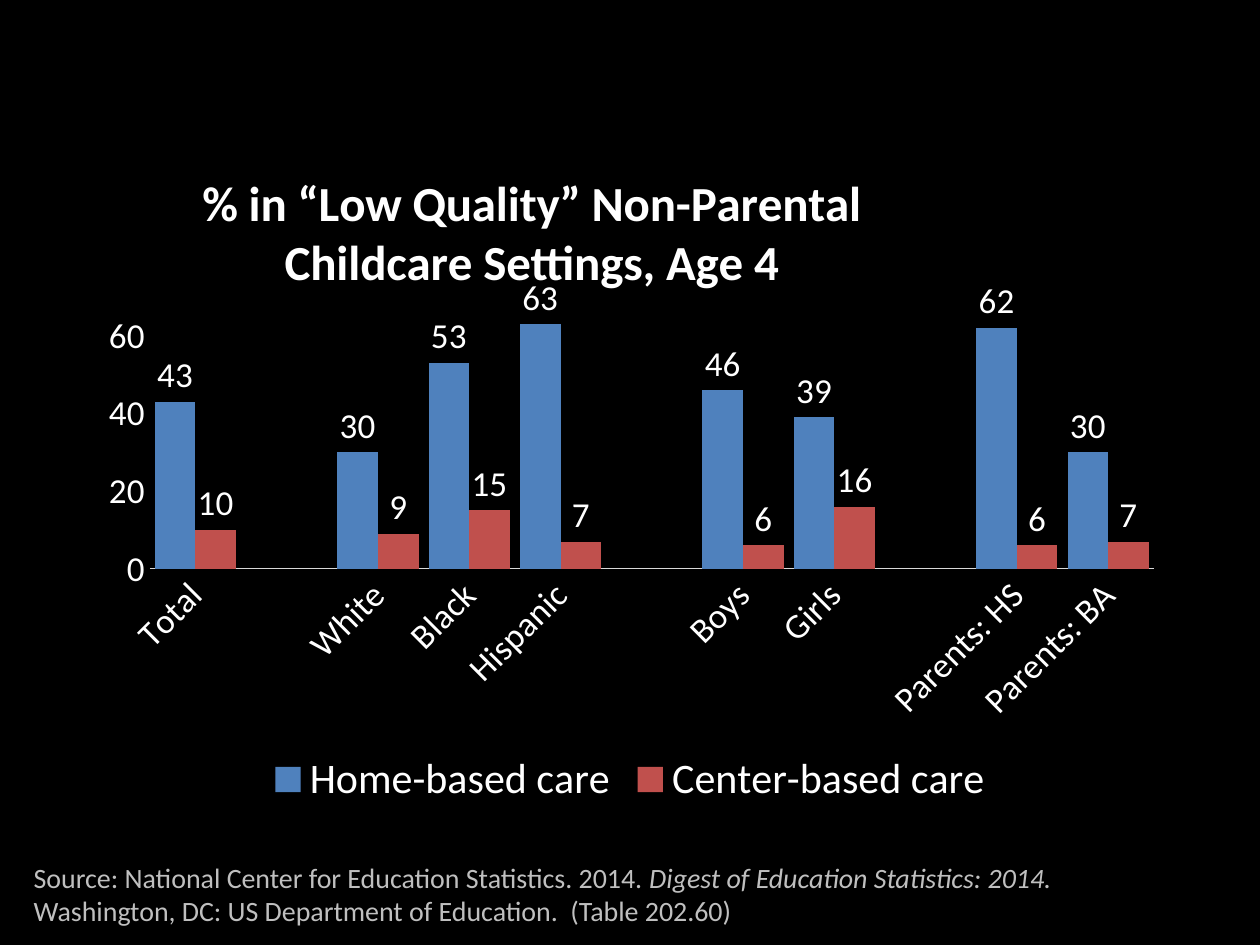
import pptx
import pptx.chart.data
import pptx.dml.color
import pptx.enum.chart
import pptx.enum.text
import pptx.util
from lxml import etree
from pptx.util import Cm

CHART_NS = "http://schemas.openxmlformats.org/drawingml/2006/chart"
WHITE = "FFFFFF"
SERIES = {
    "Home-based care": ("4F81BD", [43, None, 30, 53, 63, None, 46, 39, None, 62, 30]),
    "Center-based care": ("C0504D", [10, None, 9, 15, 7, None, 6, 16, None, 6, 7]),
}
CATEGORIES = ["Total", "", "White", "Black", "Hispanic", "", "Boys", "Girls",
              "", "Parents: HS", "Parents: BA"]


def color(hex_string):
    return pptx.dml.color.RGBColor.from_string(hex_string)


def fill(target, hex_string):
    target.fill.solid()
    target.fill.fore_color.rgb = color(hex_string)


def place(element, index, **fractions):
    for old in element.findall(f"{{{CHART_NS}}}layout"):
        element.remove(old)
    layout = etree.Element(f"{{{CHART_NS}}}layout")
    manual = etree.SubElement(layout, f"{{{CHART_NS}}}manualLayout")
    settings = {"xMode": "edge", "yMode": "edge", **fractions}
    if "w" in fractions:
        settings = {"layoutTarget": "inner", **settings}
    for name, value in settings.items():
        etree.SubElement(manual, f"{{{CHART_NS}}}{name}", val=str(value))
    element.insert(index, layout)


class ChartSlide:
    font_name = "Calibri"

    def __init__(self, deck, background):
        self.page = deck.slides.add_slide(deck.slide_layouts[6])
        fill(self.page.background, background)

    def style(self, font, size, hex_string, bold=False):
        font.name = self.font_name
        font.size = pptx.util.Pt(size)
        font.bold = bold
        font.color.rgb = color(hex_string)

    def column_chart(self, left, top, width, height, title):
        data = pptx.chart.data.CategoryChartData()
        data.categories = CATEGORIES
        for name, (_, values) in SERIES.items():
            data.add_series(name, values)
        kind = pptx.enum.chart.XL_CHART_TYPE.COLUMN_CLUSTERED
        chart = self.page.shapes.add_chart(
            kind, Cm(left), Cm(top), Cm(width), Cm(height), data).chart
        self.style(chart.font, 20, WHITE)
        self.title(chart, title)
        self.axes(chart)
        self.columns(chart.plots[0])
        self.legend(chart)
        place(chart.element.xpath(".//c:plotArea")[0], 0, x=0.06, y=0.24, w=0.92, h=0.4)

    def title(self, chart, text):
        chart.has_title = True
        paragraph = chart.chart_title.text_frame.paragraphs[0]
        paragraph.text = text
        self.style(paragraph.font, 28, WHITE, bold=True)
        place(chart.element.xpath("./c:chart/c:title")[0], 1, x=0.1, y=0.04)

    def axes(self, chart):
        for axis in (chart.category_axis, chart.value_axis):
            axis.has_major_gridlines = False
            axis.major_tick_mark = pptx.enum.chart.XL_TICK_MARK.NONE
            axis.minor_tick_mark = pptx.enum.chart.XL_TICK_MARK.NONE
            self.style(axis.tick_labels.font, 20, WHITE)
        line = chart.category_axis.format.line
        line.color.rgb = color("D9D9D9")
        line.width = pptx.util.Pt(0.75)
        chart.element.xpath(".//c:catAx/c:txPr/a:bodyPr")[0].set("rot", "-2700000")
        chart.value_axis.format.line.fill.background()
        chart.value_axis.minimum_scale = 0
        chart.value_axis.maximum_scale = 70
        chart.value_axis.major_unit = 20

    def columns(self, plot):
        plot.gap_width = 25
        plot.overlap = 0
        plot.vary_by_categories = False
        for series, (hex_string, _) in zip(plot.series, SERIES.values()):
            fill(series.format, hex_string)
            series.invert_if_negative = False
            labels = series.data_labels
            labels.show_value = True
            labels.position = pptx.enum.chart.XL_LABEL_POSITION.OUTSIDE_END
            self.style(labels.font, 20, WHITE)

    def legend(self, chart):
        chart.has_legend = True
        chart.legend.position = pptx.enum.chart.XL_LEGEND_POSITION.BOTTOM
        chart.legend.include_in_layout = False
        self.style(chart.legend.font, 24, WHITE)

    def source_note(self, left, top, width, height, parts):
        box = self.page.shapes.add_textbox(Cm(left), Cm(top), Cm(width), Cm(height))
        frame = box.text_frame
        frame.word_wrap = True
        frame.auto_size = pptx.enum.text.MSO_AUTO_SIZE.SHAPE_TO_FIT_TEXT
        para = frame.paragraphs[0]
        self.style(para.font, 16, "BFBFBF")
        for text, italic in parts:
            span = para.add_run()
            span.text = text
            span.font.italic = italic


def main():
    deck = pptx.Presentation()
    deck.slide_width, deck.slide_height = Cm(25.4), Cm(19.05)
    slide = ChartSlide(deck, "000000")
    slide.column_chart(1.7, 2.7, 22, 13.7,
                       "% in “Low Quality” Non-Parental Childcare Settings, Age 4")
    slide.source_note(0.43, 17.22, 22.86, 1.63, [
        ("Source: National Center for Education Statistics. 2014. ", False),
        ("Digest of Education Statistics: 2014. ", True),
        ("Washington, DC: US Department of Education.  (Table 202.60)", False),
    ])
    deck.save("out.pptx")


if __name__ == "__main__":
    main()
